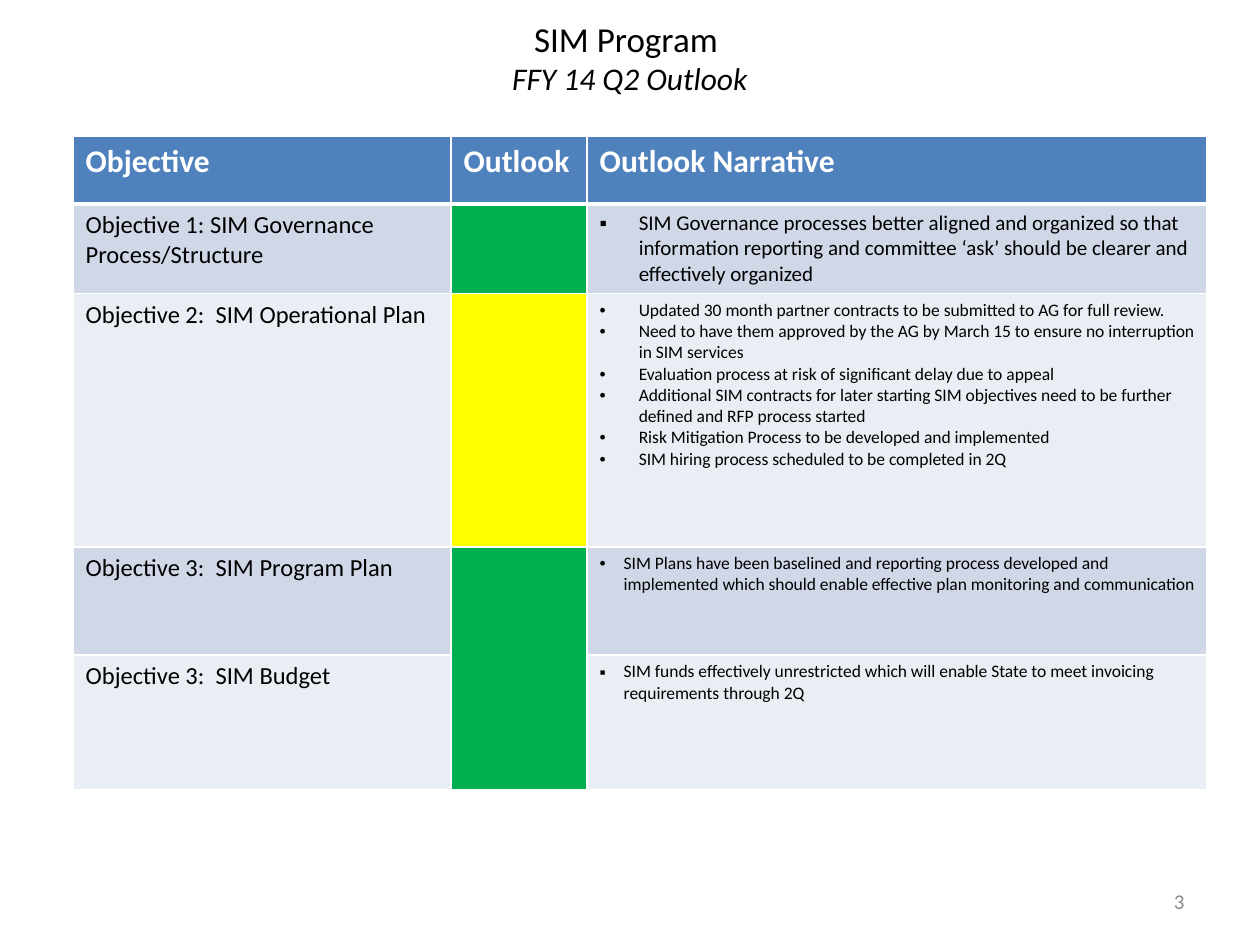
"""Build the SIM Program quarterly outlook slide."""
from dataclasses import dataclass

from lxml import etree
from pptx import Presentation
from pptx.dml.color import RGBColor
from pptx.enum.text import MSO_ANCHOR, PP_ALIGN
from pptx.oxml.ns import qn
from pptx.slide import Slide
from pptx.table import _Cell
from pptx.text.text import _Paragraph
from pptx.util import Inches, Pt

CENTER, RIGHT = PP_ALIGN.CENTER, PP_ALIGN.RIGHT
MIDDLE = MSO_ANCHOR.MIDDLE
FONT = "Calibri"
BLACK = RGBColor(0x00, 0x00, 0x00)
WHITE = RGBColor(0xFF, 0xFF, 0xFF)
GRAY = RGBColor(0x8C, 0x8C, 0x8C)
HEADER_BLUE = RGBColor(0x4F, 0x81, 0xBD)
BANDS = (RGBColor(0xD0, 0xD8, 0xE8), RGBColor(0xE9, 0xED, 0xF4))
GREEN = RGBColor(0x00, 0xB0, 0x50)
YELLOW = RGBColor(0xFF, 0xFF, 0x00)
HEADINGS = ("Objective", "Outlook", "Outlook Narrative")
COLUMN_WIDTHS = (3, 1.08, 4.92)
HEADER_HEIGHT = 0.54


@dataclass(frozen=True)
class Objective:
    title: str
    status: RGBColor
    height: float
    narrative: tuple[str, ...]
    bullet: str
    indent: float
    size: int = 10


OBJECTIVES = (
    Objective(
        "Objective 1: SIM Governance Process/Structure", GREEN, 0.71,
        ("SIM Governance processes better aligned and organized so that information "
         "reporting and committee ‘ask’ should be clearer and effectively organized",),
        "▪", 0.31, 12),
    Objective(
        "Objective 2:  SIM Operational Plan", YELLOW, 2.01,
        ("Updated 30 month partner contracts to be submitted to AG for full review.",
         "Need to have them approved by the AG by March 15 to ensure no interruption "
         "in SIM services",
         "Evaluation process at risk of significant delay due to appeal",
         "Additional SIM contracts for later starting SIM objectives need to be further "
         "defined and RFP process started",
         "Risk Mitigation Process to be developed and implemented",
         "SIM hiring process scheduled to be completed in 2Q"),
        "•", 0.31),
    Objective(
        "Objective 3:  SIM Program Plan", GREEN, 0.86,
        ("SIM Plans have been baselined and reporting process developed and implemented "
         "which should enable effective plan monitoring and communication",),
        "•", 0.19),
    Objective(
        "Objective 3:  SIM Budget", GREEN, 1.07,
        ("SIM funds effectively unrestricted which will enable State to meet invoicing "
         "requirements through 2Q",),
        "▪", 0.19),
)


def style_font(paragraph: _Paragraph, size: int, color: RGBColor, bold: bool = False) -> None:
    """Set the common font of a paragraph."""
    font = paragraph.font
    font.name, font.size, font.bold = FONT, Pt(size), bold
    font.color.rgb = color


def add_bullet(paragraph: _Paragraph, bullet: str, indent: float) -> None:
    """Give a paragraph a hanging bullet."""
    properties = paragraph._p.get_or_add_pPr()
    properties.set("marL", str(Inches(indent)))
    properties.set("indent", str(-Inches(indent)))
    marks = (("a:buFont", "typeface", "Arial"), ("a:buChar", "char", bullet))
    for position, (tag, attribute, value) in enumerate(marks):
        mark = etree.Element(qn(tag))
        mark.set(attribute, value)
        properties.insert(position, mark)


def paint_cell(cell: _Cell, color: RGBColor, bottom_width: int = 1) -> None:
    """Fill a cell and draw its white borders."""
    properties = cell._tc.get_or_add_tcPr()
    for side, width in (("L", 1), ("R", 1), ("T", 1), ("B", bottom_width)):
        line = etree.SubElement(properties, qn(f"a:ln{side}"), w=str(Pt(width)))
        fill = etree.SubElement(line, qn("a:solidFill"))
        etree.SubElement(fill, qn("a:srgbClr"), val=str(WHITE))
    cell.fill.solid()
    cell.fill.fore_color.rgb = color


def write_cell(cell: _Cell, text: str, size: int, color: RGBColor, bold: bool = False) -> None:
    """Write one or more paragraphs, split at line ends, into a cell."""
    cell.text = text
    for paragraph in cell.text_frame.paragraphs:
        style_font(paragraph, size, color, bold)


def add_text(slide: Slide, left: float, top: float, width: float, height: float,
             align: PP_ALIGN) -> _Paragraph:
    """Add a vertically centred text box and return its paragraph."""
    frame = slide.shapes.add_textbox(
        Inches(left), Inches(top), Inches(width), Inches(height)).text_frame
    frame.word_wrap = True
    frame.vertical_anchor = MIDDLE
    paragraph = frame.paragraphs[0]
    paragraph.alignment = align
    return paragraph


def add_title(slide: Slide) -> None:
    """Add the two-line title."""
    title = add_text(slide, 0.5, -0.17, 9, 1.25, CENTER)
    style_font(title, 20, BLACK)
    title.add_run().text = "SIM Program "
    title.add_line_break()
    period = title.add_run()
    period.text = "FFY 14 Q2 Outlook"
    period.font.size, period.font.italic = Pt(18), True


def add_outlook_table(slide: Slide) -> None:
    """Add the table of objectives, statuses and narratives."""
    heights = (HEADER_HEIGHT, *(objective.height for objective in OBJECTIVES))
    table = slide.shapes.add_table(
        len(heights), len(COLUMN_WIDTHS), Inches(0.58), Inches(1.08),
        Inches(sum(COLUMN_WIDTHS)), Inches(sum(heights))).table
    for column, width in zip(table.columns, COLUMN_WIDTHS):
        column.width = Inches(width)
    for row, height in zip(table.rows, heights):
        row.height = Inches(height)
    for column, heading in enumerate(HEADINGS):
        header = table.cell(0, column)
        write_cell(header, heading, 18, WHITE, bold=True)
        paint_cell(header, HEADER_BLUE, bottom_width=3)
    for row, objective in enumerate(OBJECTIVES, start=1):
        band = BANDS[(row - 1) % len(BANDS)]
        name, status, narrative = (table.cell(row, column) for column in range(3))
        write_cell(name, objective.title, 14, BLACK)
        write_cell(narrative, "\n".join(objective.narrative), objective.size, BLACK)
        for paragraph in narrative.text_frame.paragraphs:
            add_bullet(paragraph, objective.bullet, objective.indent)
        for cell, color in ((name, band), (status, objective.status), (narrative, band)):
            paint_cell(cell, color)
    table.cell(3, 1).merge(table.cell(4, 1))


def main() -> None:
    """Create and save the presentation."""
    presentation = Presentation()
    presentation.slide_width, presentation.slide_height = Inches(10), Inches(7.5)
    slide = presentation.slides.add_slide(presentation.slide_layouts[6])
    add_title(slide)
    add_outlook_table(slide)
    page_number = add_text(slide, 7.17, 6.95, 2.33, 0.4, RIGHT)
    page_number.text = "3"
    style_font(page_number, 12, GRAY)
    presentation.save("out.pptx")


if __name__ == "__main__":
    main()
